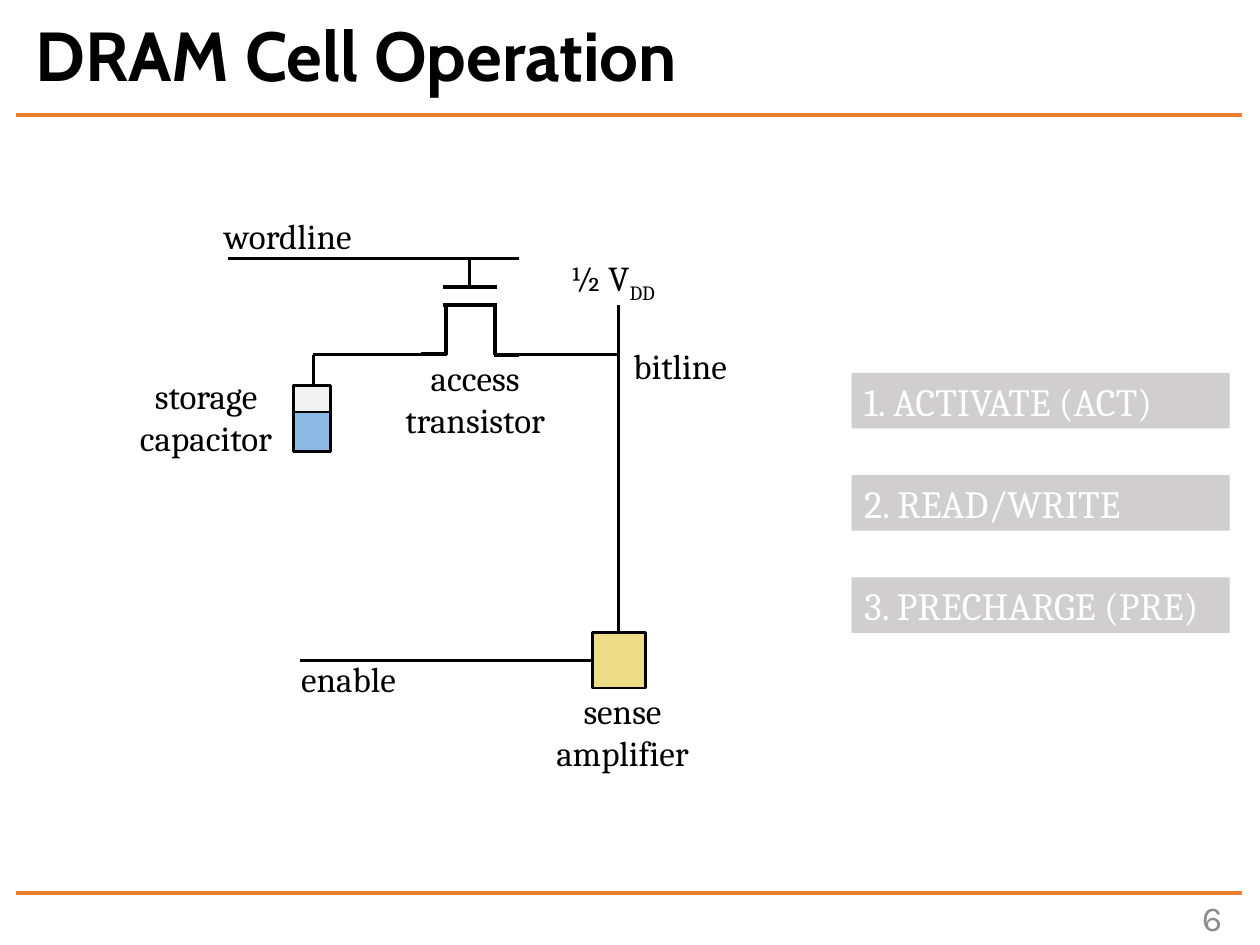
import dataclasses

import pptx
import pptx.dml.color
import pptx.enum.shapes
import pptx.enum.text
import pptx.oxml.ns
import pptx.util
from lxml import etree

Cm = pptx.util.Cm
Pt = pptx.util.Pt
Color = pptx.dml.color.RGBColor.from_string
Align = pptx.enum.text.PP_ALIGN
Anchor = pptx.enum.text.MSO_ANCHOR
RECTANGLE = pptx.enum.shapes.MSO_SHAPE.RECTANGLE


@dataclasses.dataclass(frozen=True)
class Theme:
    ink: str = "000000"
    rule: str = "ED7D31"
    number: str = "8C8C8C"
    empty: str = "F2F2F2"
    charge: str = "8DBAE4"
    amplifier: str = "EEDD88"
    command: str = "D0CECE"
    command_text: str = "FFFFFF"
    title_font: str = "Cabin"
    body_font: str = "Cambria"
    number_font: str = "Karla"
    title_size: float = 39.6
    label_size: float = 20
    command_size: float = 22
    thin: float = 1.5
    thick: float = 2.25


theme = Theme()


def add_line(shapes, ends, color, width):
    line = shapes.add_connector(
        pptx.enum.shapes.MSO_CONNECTOR.STRAIGHT, *[Cm(value) for value in ends])
    line.line.color.rgb = Color(color)
    line.line.width = Pt(width)
    etree.SubElement(line._element.spPr, pptx.oxml.ns.qn("a:effectLst"))


def add_span(para, text, font, size, color):
    span = para.add_run()
    span.text = text
    span.font.name = font
    span.font.size = Pt(size)
    span.font.color.rgb = Color(color)
    return span


deck = pptx.Presentation()
deck.slide_width, deck.slide_height = Cm(25.4), Cm(19.05)
page = deck.slides.add_slide(deck.slide_layouts[5])

# Title
title = page.shapes.title
title.left, title.top, title.width, title.height = Cm(0.46), Cm(0.36), Cm(24.71), Cm(1.68)
title.text_frame.vertical_anchor = Anchor.MIDDLE
para = title.text_frame.paragraphs[0]
para.alignment = Align.LEFT
para.line_spacing = 0.9
span = add_span(para, "DRAM Cell Operation", theme.title_font, theme.title_size, theme.ink)
span.font.bold = True

# Rules above and below the content, page number
for y in (2.31, 18.01):
    add_line(page.shapes, (0.33, y, 25.04, y), theme.rule, theme.thick)
box = page.shapes.add_textbox(Cm(22.15), Cm(17.98), Cm(2.74), Cm(1.02))
box.text_frame.word_wrap = True
box.text_frame.vertical_anchor = Anchor.MIDDLE
para = box.text_frame.paragraphs[0]
para.alignment = Align.RIGHT
add_span(para, "6", theme.number_font, theme.label_size, theme.number)

# Wires
wires = [
    (4.6, 5.21, 10.46, 5.21),      # wordline
    (9.47, 5.79, 9.47, 5.21),      # wordline to gate
    (12.47, 6.15, 12.47, 12.9),    # bitline
    (6.32, 7.16, 6.32, 7.95),      # down to capacitor
    (6.3, 7.14, 8.74, 7.14),       # capacitor to transistor
    (10.01, 7.14, 12.47, 7.14),    # transistor to bitline
    (6.05, 13.31, 11.94, 13.31),   # enable
]
for ends in wires:
    add_line(page.shapes, ends, theme.ink, theme.thin)

# Access transistor
transistor = page.shapes.add_group_shape()
strokes = [
    (8.48, 7.14, 9.02, 7.14),
    (8.99, 7.16, 8.99, 6.15),
    (8.94, 5.79, 10.01, 5.79),
    (8.94, 6.15, 10.01, 6.15),
    (9.98, 7.16, 9.98, 6.15),
    (9.96, 7.16, 10.46, 7.16),
]
for ends in strokes:
    add_line(transistor.shapes, ends, theme.ink, theme.thick)

# Capacitor, its charge and the sense amplifier
parts = [
    (5.92, 7.77, 0.74, 1.32, theme.empty),
    (5.92, 8.31, 0.74, 0.79, theme.charge),
    (11.94, 12.75, 1.07, 1.12, theme.amplifier),
]
for *place, color in parts:
    part = page.shapes.add_shape(RECTANGLE, *[Cm(value) for value in place])
    part.shadow.inherit = False
    part.fill.solid()
    part.fill.fore_color.rgb = Color(color)
    part.line.color.rgb = Color(theme.ink)
    part.line.width = Pt(theme.thin)

# Labels: left, top, width, lines; two-line labels are centred
labels = [
    (4.27, 4.19, 3.28, ["wordline"]),
    (12.52, 6.83, 2.46, ["bitline"]),
    (9.83, 13.77, 5.44, ["sense", "amplifier"]),
    (5.82, 13.13, 2.54, ["enable"]),
    (2.49, 7.42, 3.33, ["storage", "capacitor"]),
    (7.8, 7.06, 3.56, ["access", "transistor"]),
    (11.25, 5.05, 2.46, ["½ V"]),
]
for left, top, width, lines in labels:
    height = 1.12 if len(lines) == 1 else 1.96
    box = page.shapes.add_textbox(Cm(left), Cm(top), Cm(width), Cm(height))
    frame = box.text_frame
    frame.word_wrap = len(lines) > 1 and width > 5
    for index, text in enumerate(lines):
        para = frame.add_paragraph() if index else frame.paragraphs[0]
        para.alignment = Align.CENTER if len(lines) > 1 else Align.LEFT
        add_span(para, text, theme.body_font, theme.label_size, theme.ink)

# Subscript of the supply voltage, the last label
span = add_span(para, "DD", theme.body_font, theme.label_size, theme.ink)
span.font._element.set("baseline", "-25000")

# Commands
commands = ["1. ACTIVATE (ACT)", "2. READ/WRITE", "3. PRECHARGE (PRE)"]
for index, text in enumerate(commands):
    bar = page.shapes.add_shape(
        RECTANGLE, Cm(17.17), Cm(7.52 + 2.06 * index), Cm(7.62), Cm(1.12))
    bar.shadow.inherit = False
    bar.fill.solid()
    bar.fill.fore_color.rgb = Color(theme.command)
    bar.line.fill.background()
    bar.text_frame.vertical_anchor = Anchor.MIDDLE
    para = bar.text_frame.paragraphs[0]
    para.alignment = Align.JUSTIFY
    add_span(para, text, theme.body_font, theme.command_size, theme.command_text)

deck.save("out.pptx")
